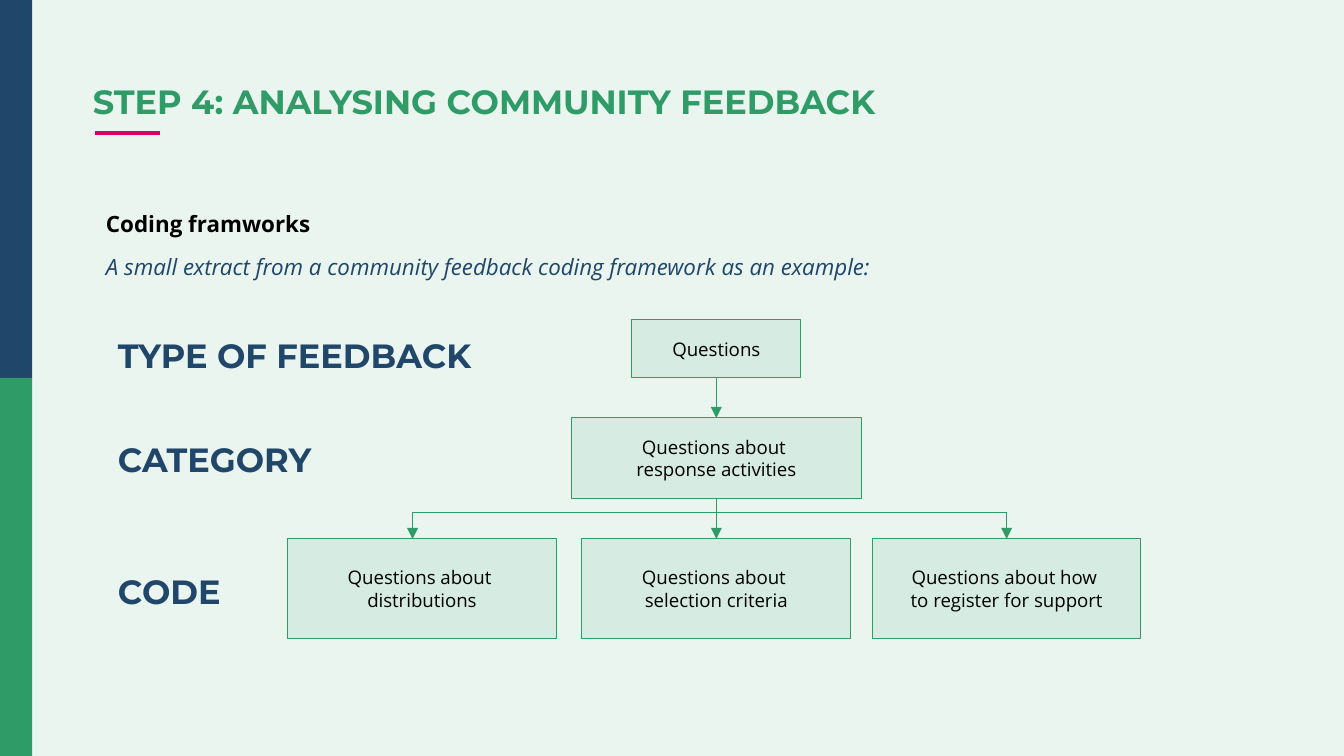
from lxml import etree
from pptx import Presentation
from pptx.dml.color import RGBColor
from pptx.enum.shapes import MSO_CONNECTOR, MSO_SHAPE
from pptx.enum.text import MSO_ANCHOR, PP_ALIGN
from pptx.oxml.ns import qn
from pptx.util import Inches, Pt

RECTANGLE = MSO_SHAPE.RECTANGLE
STRAIGHT = MSO_CONNECTOR.STRAIGHT
MIDDLE = MSO_ANCHOR.MIDDLE
CENTER = PP_ALIGN.CENTER
TOP_SIDE, BOTTOM_SIDE = 0, 2

GREEN, NAVY, PINK, BLACK = "2F9C67", "204669", "D90368", "000000"
PALE_GREEN = "EAF5F0"
HEADING_FONT, BODY_FONT = "Montserrat", "Open Sans"

SLIDE_WIDTH = 10
SLIDE_HEIGHT = SLIDE_WIDTH * 9 / 16
BAR_HEIGHT = SLIDE_HEIGHT / 2
CODE_TOP, CODE_WIDTH, CODE_HEIGHT = 4.01, 2, 0.74
BUS_Y, BUS_LEFT, BUS_RIGHT = 3.81, 3.07, 7.49


def color(hex_value):
    return RGBColor.from_string(hex_value)


def add_run(paragraph, text, size, font, hex_value, bold=False, italic=False):
    run = paragraph.add_run()
    run.text = text
    run.font.size = Pt(size)
    run.font.name = font
    run.font.bold = bold
    run.font.italic = italic
    run.font.color.rgb = color(hex_value)


def add_text_box(slide, left, top, width, height, wrap=True):
    shape = slide.shapes.add_textbox(
        Inches(left), Inches(top), Inches(width), Inches(height))
    shape.text_frame.word_wrap = wrap
    return shape.text_frame


def add_rectangle(slide, left, top, width, height, fill):
    shape = slide.shapes.add_shape(
        RECTANGLE, Inches(left), Inches(top), Inches(width), Inches(height))
    shape.shadow.inherit = False
    shape.fill.solid()
    shape.fill.fore_color.rgb = color(fill)
    shape.line.fill.background()
    return shape


def add_box(slide, left, top, width, height, lines):
    """Outlined, see-through green box with centred lines of text."""
    shape = add_rectangle(slide, left, top, width, height, GREEN)
    fill_color = shape.fill._xPr.find(qn("a:solidFill"))[0]
    etree.SubElement(fill_color, qn("a:alpha"), val="10000")
    shape.line.color.rgb = color(GREEN)
    shape.line.width = Pt(0.5)

    frame = shape.text_frame
    frame.word_wrap = True
    frame.vertical_anchor = MIDDLE
    paragraph = frame.paragraphs[0]
    paragraph.alignment = CENTER
    for index, line in enumerate(lines):
        if index:
            paragraph.add_line_break()
        add_run(paragraph, line, 10, BODY_FONT, BLACK)
    return shape


def add_line(slide, start, end, hex_value=GREEN, width=0.5, arrow=False,
             from_box=None, to_box=None):
    connector = slide.shapes.add_connector(
        STRAIGHT, *(Inches(value) for value in start + end))
    connector.line.color.rgb = color(hex_value)
    connector.line.width = Pt(width)
    etree.SubElement(connector._element.spPr, qn("a:effectLst"))
    if arrow:
        etree.SubElement(connector.line._get_or_add_ln(), qn("a:tailEnd"),
                         type="triangle")
    if from_box is not None:
        connector.begin_connect(from_box, BOTTOM_SIDE)
    if to_box is not None:
        connector.end_connect(to_box, TOP_SIDE)


def add_heading(slide):
    frame = add_text_box(slide, 0.69, 0.59, 8.62, 0.37)
    frame.margin_left = 0
    paragraph = frame.paragraphs[0]
    paragraph.line_spacing = 0.9
    add_run(paragraph, "STEP 4: ANALYSING COMMUNITY FEEDBACK", 18,
            HEADING_FONT, GREEN, bold=True)
    add_line(slide, (0.71, 0.99), (1.19, 0.99), PINK, 2.25)


def add_introduction(slide):
    frame = add_text_box(slide, 0.69, 1.5, 8.62, 3.57)
    first = frame.paragraphs[0]
    add_run(first, "Coding framworks", 12, BODY_FONT, BLACK, bold=True)
    second = frame.add_paragraph()
    second.space_before = Pt(7.5)
    add_run(second, "A small extract from a community feedback coding "
            "framework as an example:", 12, BODY_FONT, NAVY, italic=True)
    for paragraph in (first, second):
        paragraph.line_spacing = Pt(15.4)


def add_level_labels(slide):
    labels = [("TYPE OF FEEDBACK", 2.44, 2.93),
              ("CATEGORY", 3.22, 1.73),
              ("CODE", 4.2, 1.04)]
    for text, top, width in labels:
        frame = add_text_box(slide, 0.78, top, width, 0.4, wrap=False)
        add_run(frame.paragraphs[0], text, 18, HEADING_FONT, NAVY, bold=True)


def add_coding_tree(slide):
    # Boxes
    feedback_type = add_box(slide, 4.7, 2.38, 1.26, 0.43, ["Questions"])
    category = add_box(slide, 4.25, 3.11, 2.16, 0.6,
                       ["Questions about ", "response activities"])
    codes = [(2.14, ["Questions about ", "distributions"]),
             (4.33, ["Questions about ", "selection criteria"]),
             (6.49, ["Questions about how ", "to register for support"])]
    _, middle_code, right_code = [
        add_box(slide, left, CODE_TOP, CODE_WIDTH, CODE_HEIGHT, lines)
        for left, lines in codes]

    # Type to category, then category to the codes
    add_line(slide, (5.33, 2.81), (5.33, 3.11), arrow=True,
             from_box=feedback_type, to_box=category)
    add_line(slide, (5.33, 3.71), (5.33, BUS_Y), width=0.75, from_box=category)
    add_line(slide, (BUS_LEFT, BUS_Y), (BUS_RIGHT, BUS_Y))
    for x, code in [(BUS_LEFT, None), (5.33, middle_code),
                    (BUS_RIGHT, right_code)]:
        add_line(slide, (x, BUS_Y), (x, CODE_TOP), arrow=True, to_box=code)


def main():
    presentation = Presentation()
    presentation.slide_width = Inches(SLIDE_WIDTH)
    presentation.slide_height = Inches(SLIDE_HEIGHT)
    slide = presentation.slides.add_slide(presentation.slide_layouts[6])

    # Background and side bars
    background = slide.background.fill
    background.solid()
    background.fore_color.rgb = color(PALE_GREEN)
    for index, fill in enumerate((NAVY, GREEN)):
        add_rectangle(slide, 0, index * BAR_HEIGHT, 0.24, BAR_HEIGHT, fill)

    add_heading(slide)
    add_introduction(slide)
    add_coding_tree(slide)
    add_level_labels(slide)
    presentation.save("out.pptx")


if __name__ == "__main__":
    main()
